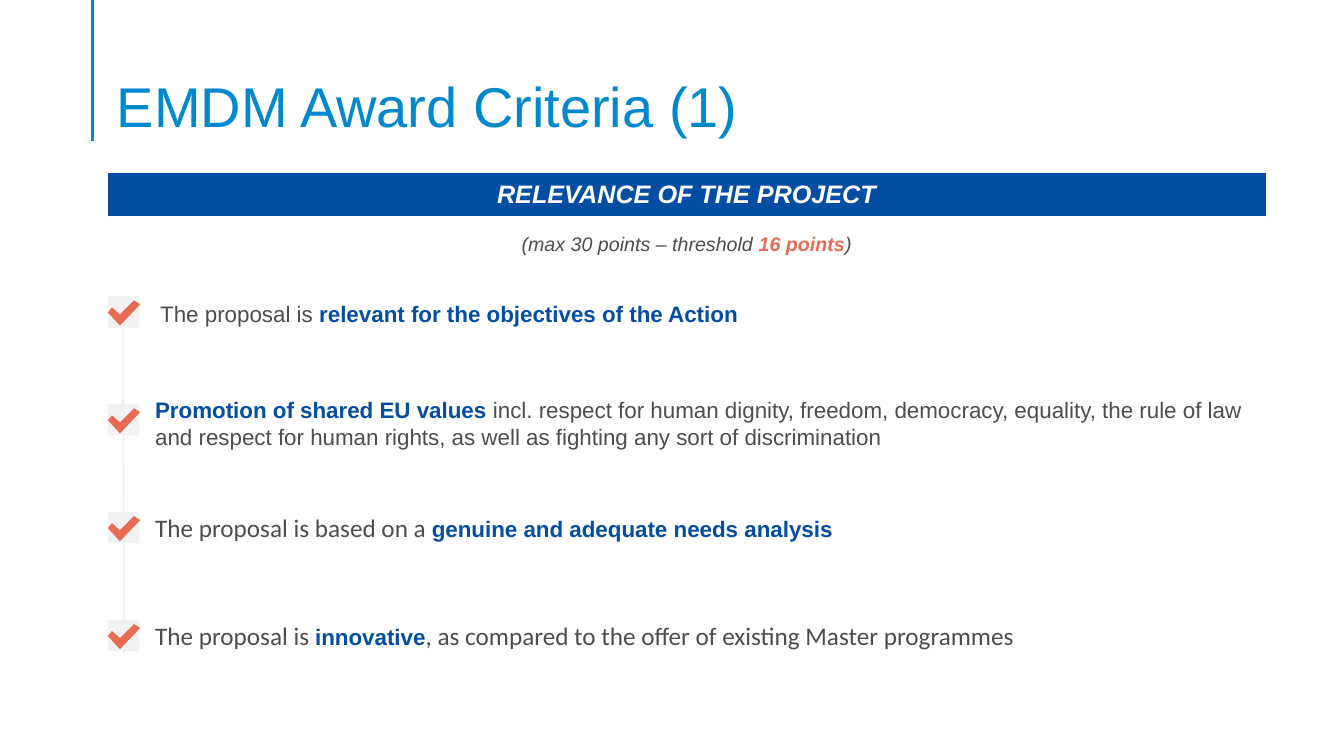
import pptx
import pptx.dml.color
import pptx.enum.shapes
import pptx.enum.text
import pptx.oxml.ns
import pptx.util
from lxml import etree

SKY, BLUE, CORAL = "0088CE", "034EA2", "E76C53"
GREY, PALE, WHITE = "4D4D4D", "F2F2F2", "FFFFFF"
ALIGN = pptx.enum.text.PP_ALIGN
ANCHOR = pptx.enum.text.MSO_ANCHOR


def color(hex_string):
    return pptx.dml.color.RGBColor.from_string(hex_string)


def grid(cells):
    """Turn a count of grid cells, ten to the inch, into a length."""
    return pptx.util.Inches(cells / 10)


def add_run(paragraph, text, font="Arial", size=16, fill=GREY, bold=False, italic=False):
    run = paragraph.add_run()
    run.text = text
    run.font.name = font
    run.font.size = pptx.util.Pt(size)
    run.font.color.rgb = color(fill)
    run.font.bold = bold
    run.font.italic = italic


class SlideBuilder:
    """Places styled elements on one slide, in columns and rows of the grid."""

    def __init__(self, slide):
        self.shapes = slide.shapes

    def line(self, start, end, stroke, width):
        connector = self.shapes.add_connector(
            pptx.enum.shapes.MSO_CONNECTOR.STRAIGHT, *map(grid, start + end))
        connector.line.color.rgb = color(stroke)
        connector.line.width = pptx.util.Pt(width)
        etree.SubElement(connector._element.spPr, pptx.oxml.ns.qn("a:effectLst"))

    def paint(self, shape, fill, stroke=None):
        shape.shadow.inherit = False
        shape.fill.solid()
        shape.fill.fore_color.rgb = color(fill)
        if stroke:
            shape.line.color.rgb = color(stroke)
            shape.line.width = pptx.util.Pt(1)
        else:
            shape.line.fill.background()

    def rectangle(self, column, row, columns, rows, fill, stroke=None):
        shape = self.shapes.add_shape(
            pptx.enum.shapes.MSO_SHAPE.RECTANGLE, *map(grid, (column, row, columns, rows)))
        self.paint(shape, fill, stroke)

    def check_mark(self, column, row):
        outline = [(1.2, 2.5), (0, 1.2), (0.4, 0.7), (1.2, 1.4), (2.6, 0), (3.2, 0.4)]
        points = [(grid(column + x), grid(row + y)) for x, y in outline]
        builder = self.shapes.build_freeform(*points[0], scale=1.0)
        builder.add_line_segments(points[1:], close=True)
        self.paint(builder.convert_to_shape(), CORAL)

    def text(self, column, row, columns, rows, runs, align=ALIGN.LEFT,
             anchor=ANCHOR.TOP, bottom=0.5, spacing=None):
        """Add one paragraph made of (text, format) runs."""
        frame = self.shapes.add_textbox(*map(grid, (column, row, columns, rows))).text_frame
        frame.word_wrap = True
        frame.vertical_anchor = anchor
        frame.margin_bottom = grid(bottom)
        paragraph = frame.paragraphs[0]
        paragraph.alignment = align
        paragraph.line_spacing = spacing
        for text, style in runs:
            add_run(paragraph, text, **style)


def main():
    presentation = pptx.Presentation()
    presentation.slide_width = pptx.util.Inches(13.33)
    presentation.slide_height = pptx.util.Inches(7.5)
    builder = SlideBuilder(presentation.slides.add_slide(presentation.slide_layouts[6]))

    left, width = 10.6, 115
    builder.line((9.2, 0), (9.2, 14), SKY, 2.25)
    builder.text(left, 5.3, width, 8.6,
                 [("EMDM Award Criteria (1)", dict(size=40, fill=SKY))],
                 anchor=ANCHOR.BOTTOM, bottom=0, spacing=0.9)

    builder.rectangle(left, 17.1, width, 4.4, BLUE, stroke=WHITE)
    builder.text(left, 17.2, width, 4,
                 [("RELEVANCE OF THE PROJECT", dict(size=18, fill=WHITE, bold=True, italic=True))],
                 align=ALIGN.CENTER)
    note = dict(size=14, italic=True)
    builder.text(left, 22.5, width, 3.4,
                 [("(max 30 points – threshold ", note),
                  ("16 points", dict(note, fill=CORAL, bold=True)),
                  (")", note)],
                 align=ALIGN.CENTER)

    plain, strong = {}, dict(fill=BLUE, bold=True)
    calibri = dict(font="Calibri", size=18)
    criteria = [  # text column, row and height, then the runs
        (14.9, 29.3, 3.7, [("The proposal is ", plain),
                           ("relevant for the objectives of the Action", strong)]),
        (14.4, 38.8, 6.4, [("Promotion of shared EU values ", strong),
                           ("incl. respect for human dignity, freedom, democracy, equality, "
                            "the rule of law and respect for human rights, as well as "
                            "fighting any sort of discrimination", plain)]),
        (14.4, 50.3, 6.7, [("The proposal is based on a ", calibri),
                           ("genuine and adequate needs analysis", strong)]),
        (14.4, 61, 7.6, [("The proposal is ", calibri),
                         ("innovative", strong),
                         (", as compared to the offer of existing Master programmes", calibri)]),
    ]
    first_box, pitch, box = 29.4, 10.7, 3.1
    builder.line((12.2, first_box), (12.3, 64.8), PALE, 1.5)
    for index, (column, row, rows, runs) in enumerate(criteria):
        box_row = first_box + index * pitch
        builder.rectangle(left + 0.1, box_row, box, box, PALE)
        builder.check_mark(left + 0.1, box_row + 0.4)
        builder.text(column, row, 111.2, rows, runs)

    presentation.save("out.pptx")


if __name__ == "__main__":
    main()
